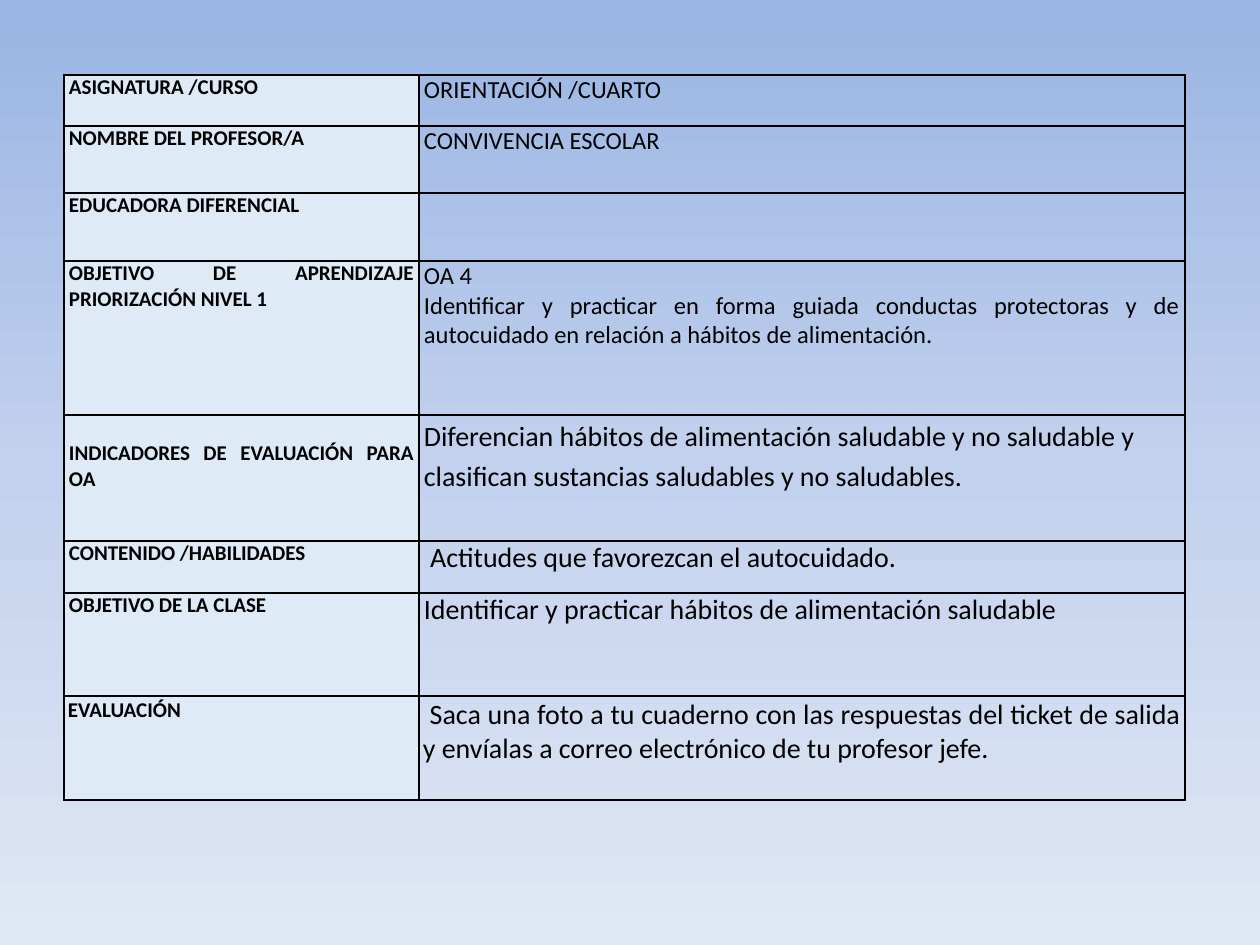
import copy

import pptx
import pptx.dml.color
import pptx.enum.text
import pptx.oxml
import pptx.oxml.ns
import pptx.util

PX = 914400 // 126
JUSTIFY = pptx.enum.text.PP_ALIGN.JUSTIFY
LEFT = pptx.enum.text.PP_ALIGN.LEFT


def rgb(value):
    return pptx.dml.color.RGBColor.from_string(value)


def fill_cell(cell, text, size, bold, margins, align=JUSTIFY, spacing=None, fill=None):
    """Write text in a cell and give it margins (side, top), borders and fill."""
    side, top = margins
    formats = {"margin_left": side, "margin_right": side, "margin_top": top, "margin_bottom": 0}
    for name, value in formats.items():
        setattr(cell, name, value * PX)
    tf = cell.text_frame
    tf.text = text
    for p in tf.paragraphs:
        p.alignment = align
        p.line_spacing = spacing
        for r in p.runs:
            for name, value in {"name": "Calibri", "size": pptx.util.Pt(size), "bold": bold}.items():
                setattr(r.font, name, value)
            r.font.color.rgb = rgb("000000")
    tc_pr = cell._tc.get_or_add_tcPr()
    for edge in ("lnL", "lnR", "lnT", "lnB"):
        tc_pr.append(pptx.oxml.parse_xml(
            f'<a:{edge} {pptx.oxml.ns.nsdecls("a")} w="12700"><a:solidFill>'
            f'<a:srgbClr val="000000"/></a:solidFill></a:{edge}>'))
    if fill:
        cell.fill.solid()
        cell.fill.fore_color.rgb = rgb(fill)
    else:
        cell.fill.background()


prs = pptx.Presentation()
prs.slide_width = 1260 * PX
prs.slide_height = 945 * PX
s = prs.slides.add_slide(prs.slide_layouts[6])

# Background, light towards the bottom
bg = s.background.fill
bg.gradient()
bg.gradient_angle = 270
stops = bg._fill._gradFill.gsLst
stops.append(copy.deepcopy(stops[0]))
for stop, (position, color) in zip(bg.gradient_stops, [(0, "9AB5E4"), (0.5, "C2D1ED"), (1, "E1E8F5")]):
    stop.position = position
    stop.color.rgb = rgb(color)

# Row height, label, label margins, text, text size, text margins, alignment, line spacing
plain = (5, 0)
rows = [
    (51, "ASIGNATURA /CURSO", plain, "ORIENTACIÓN /CUARTO", 14, plain, JUSTIFY, None),
    (67, "NOMBRE DEL PROFESOR/A", plain, "CONVIVENCIA ESCOLAR", 14, plain, JUSTIFY, None),
    (68, "EDUCADORA DIFERENCIAL", plain, "", 14, plain, JUSTIFY, None),
    (154, "OBJETIVO DE APRENDIZAJE PRIORIZACIÓN NIVEL 1", plain,
     "OA 4\nIdentificar y practicar en forma guiada conductas protectoras y de autocuidado "
     "en relación a hábitos de alimentación.", 14, plain, JUSTIFY, None),
    (126, "INDICADORES DE EVALUACIÓN PARA OA", (5, 26),
     "Diferencian hábitos de alimentación saludable y no saludable y clasifican sustancias "
     "saludables y no saludables.", 16, plain, LEFT, 1.15),
    (52, "CONTENIDO /HABILIDADES", plain,
     " Actitudes que favorezcan el autocuidado.", 16, plain, JUSTIFY, None),
    (103, "OBJETIVO DE LA CLASE", plain,
     "Identificar y practicar hábitos de alimentación saludable", 16, plain, JUSTIFY, None),
    (104, "EVALUACIÓN", (4, 2),
     " Saca una foto a tu cuaderno con las respuestas del ticket de salida y envíalas a "
     "correo electrónico de tu profesor jefe.", 16, (4, 2), JUSTIFY, None),
]
widths = [355, 766]
height = sum(row[0] for row in rows)
table = s.shapes.add_table(len(rows), 2, 64 * PX, 75 * PX, sum(widths) * PX, height * PX).table
table.first_row = False
table.horz_banding = False
for column, width in zip(table.columns, widths):
    column.width = width * PX
for i, (row_height, label, label_margins, text, size, margins, align, spacing) in enumerate(rows):
    table.rows[i].height = row_height * PX
    fill_cell(table.cell(i, 0), label, 12, True, label_margins, fill="DEEAF6")
    fill_cell(table.cell(i, 1), text, size, False, margins, align, spacing)

prs.save("out.pptx")
